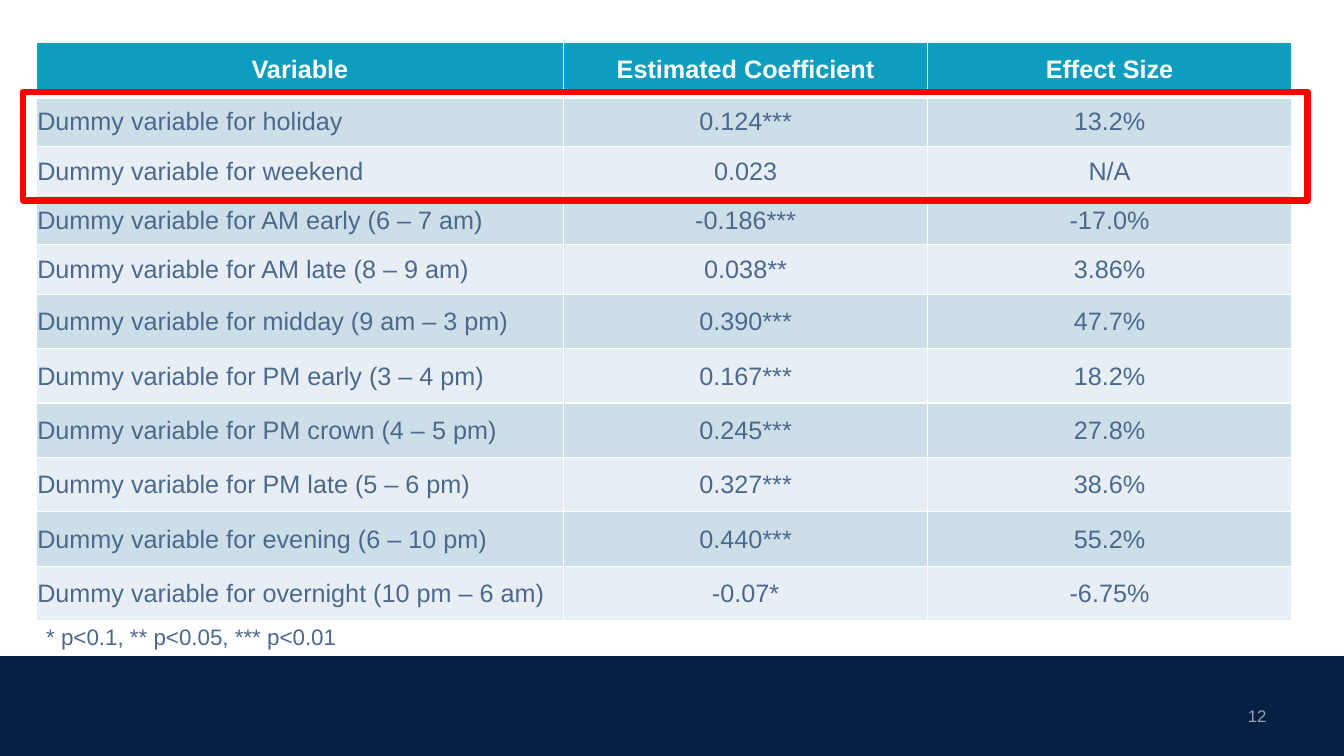
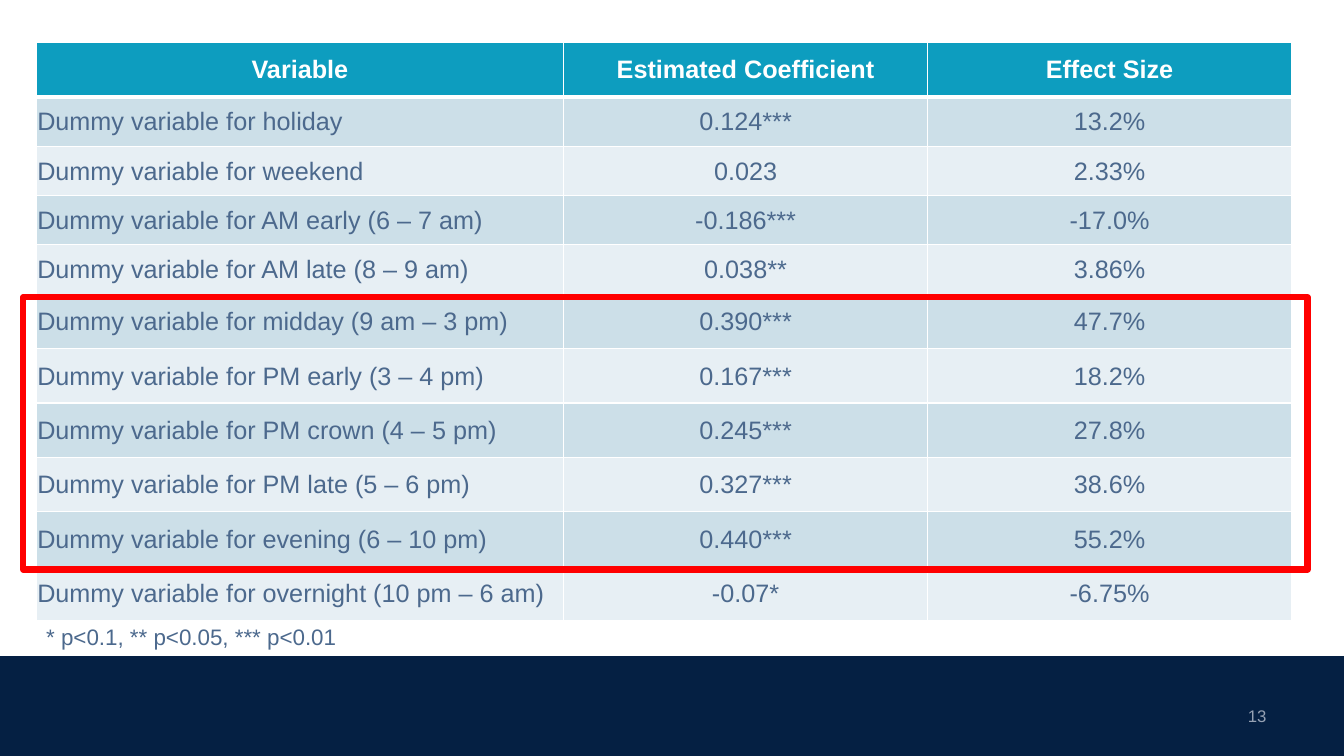
from dataclasses import dataclass

from pptx import Presentation
from pptx.dml.color import RGBColor
from pptx.enum.shapes import MSO_SHAPE
from pptx.enum.text import MSO_ANCHOR, PP_ALIGN
from pptx.oxml.ns import qn
from pptx.util import Inches, Pt
from lxml import etree

RECTANGLE = MSO_SHAPE.RECTANGLE
TOP, MIDDLE = MSO_ANCHOR.TOP, MSO_ANCHOR.MIDDLE
LEFT, CENTER, RIGHT = PP_ALIGN.LEFT, PP_ALIGN.CENTER, PP_ALIGN.RIGHT

SLIDE_WIDTH, SLIDE_HEIGHT = 13.33, 7.5
BAND_TOP = 6.51
TABLE_LEFT, TABLE_TOP = 0.36, 0.42
COLUMN_WIDTHS = [5.23, 3.61, 3.61]
ROW_HEIGHTS = [0.54] + [0.49] * 4 + [0.54] * 6
FRAME_LEFT, FRAME_WIDTH = 0.23, 12.74

HEADINGS = ("Variable", "Estimated Coefficient", "Effect Size")
ESTIMATES = [
    ("holiday", "0.124***", "13.2%"),
    ("weekend", "0.023", "2.33%"),
    ("AM early (6 – 7 am)", "-0.186***", "-17.0%"),
    ("AM late (8 – 9 am)", "0.038**", "3.86%"),
    ("midday (9 am – 3 pm)", "0.390***", "47.7%"),
    ("PM early (3 – 4 pm)", "0.167***", "18.2%"),
    ("PM crown (4 – 5 pm)", "0.245***", "27.8%"),
    ("PM late (5 – 6 pm)", "0.327***", "38.6%"),
    ("evening (6 – 10 pm)", "0.440***", "55.2%"),
    ("overnight (10 pm – 6 am)", "-0.07*", "-6.75%"),
]
SIGNIFICANCE = "* p<0.1, ** p<0.05, *** p<0.01"


@dataclass(frozen=True)
class Theme:
    font: str = "Arial"
    white: str = "FFFFFF"
    navy: str = "052043"
    teal: str = "0D9DBF"
    stripes: tuple = ("CCDFE8", "E7EFF4")
    body: str = "4C698D"
    muted: str = "96A1B3"
    highlight: str = "FF0000"
    table_size: int = 18
    note_size: int = 16
    number_size: int = 12
    grid_line: float = 1
    header_line: float = 3
    frame_line: float = 4.5


class Deck:
    def __init__(self, theme):
        self.theme = theme
        self.prs = Presentation()
        self.prs.slide_width = Inches(SLIDE_WIDTH)
        self.prs.slide_height = Inches(SLIDE_HEIGHT)
        self.slide = None

    def new_slide(self, number):
        """Start a slide with the shared band and slide number."""
        theme = self.theme
        self.slide = self.prs.slides.add_slide(self.prs.slide_layouts[6])
        band = self.rectangle(0, BAND_TOP, SLIDE_WIDTH, SLIDE_HEIGHT - BAND_TOP)
        band.fill.solid()
        band.fill.fore_color.rgb = RGBColor.from_string(theme.navy)
        band.line.fill.background()
        self.text(str(number), 11.65, 6.9, 1.01, 0.4, theme.number_size,
                  theme.muted, align=RIGHT, anchor=MIDDLE)

    def rectangle(self, left, top, width, height):
        shape = self.slide.shapes.add_shape(
            RECTANGLE, Inches(left), Inches(top), Inches(width), Inches(height))
        shape.shadow.inherit = False
        return shape

    def styled_run(self, paragraph, words, size, color, align, bold=False):
        paragraph.alignment = align
        run = paragraph.add_run()
        run.text = words
        run.font.name = self.theme.font
        run.font.size = Pt(size)
        run.font.bold = bold
        run.font.color.rgb = RGBColor.from_string(color)

    def text(self, words, left, top, width, height, size, color,
             align=LEFT, anchor=TOP, wrap=True):
        box = self.slide.shapes.add_textbox(
            Inches(left), Inches(top), Inches(width), Inches(height))
        frame = box.text_frame
        frame.word_wrap = wrap
        frame.vertical_anchor = anchor
        self.styled_run(frame.paragraphs[0], words, size, color, align)

    def borders(self, cell, top, bottom):
        grid = self.theme.grid_line
        properties = cell._tc.get_or_add_tcPr()
        for side, points in (("L", grid), ("R", grid), ("T", top), ("B", bottom)):
            edge = etree.SubElement(properties, qn(f"a:ln{side}"), w=str(Pt(points)))
            fill = etree.SubElement(edge, qn("a:solidFill"))
            etree.SubElement(fill, qn("a:srgbClr"), val=self.theme.white)

    def table(self, rows):
        theme = self.theme
        table = self.slide.shapes.add_table(
            len(rows), len(COLUMN_WIDTHS), Inches(TABLE_LEFT), Inches(TABLE_TOP),
            Inches(sum(COLUMN_WIDTHS)), Inches(sum(ROW_HEIGHTS))).table
        for column, width in zip(table.columns, COLUMN_WIDTHS):
            column.width = Inches(width)
        for r, (values, height) in enumerate(zip(rows, ROW_HEIGHTS)):
            table.rows[r].height = Inches(height)
            header = r == 0
            background = theme.teal if header else theme.stripes[(r - 1) % 2]
            for c, value in enumerate(values):
                cell = table.cell(r, c)
                cell.vertical_anchor = MIDDLE
                if not header:
                    cell.margin_left = cell.margin_right = cell.margin_top = Inches(0.01)
                    cell.margin_bottom = 0
                self.borders(cell,
                             top=theme.header_line if r == 1 else theme.grid_line,
                             bottom=theme.header_line if header else theme.grid_line)
                cell.fill.solid()
                cell.fill.fore_color.rgb = RGBColor.from_string(background)
                self.styled_run(cell.text_frame.paragraphs[0], value, theme.table_size,
                                theme.white if header else theme.body,
                                CENTER if header or c else LEFT, bold=header)

    def highlight(self, top, height):
        """Outline a group of table rows."""
        frame = self.rectangle(FRAME_LEFT, top, FRAME_WIDTH, height)
        frame.fill.background()
        frame.line.color.rgb = RGBColor.from_string(self.theme.highlight)
        frame.line.width = Pt(self.theme.frame_line)
        etree.SubElement(frame.line._get_or_add_ln(), qn("a:round"))


def main():
    theme = Theme()
    deck = Deck(theme)

    # Slide number, weekend effect size, top and height of the highlight
    for number, weekend_effect, top, height in (
            (12, "N/A", 0.91, 1.08),
            (13, "2.33%", 2.95, 2.7)):
        deck.new_slide(number)
        rows = [HEADINGS]
        for period, coefficient, effect in ESTIMATES:
            if period == "weekend":
                effect = weekend_effect
            rows.append((f"Dummy variable for {period}", coefficient, effect))
        deck.table(rows)
        deck.highlight(top, height)
        deck.text(SIGNIFICANCE, TABLE_LEFT, 6.13, 3.12, 0.64, theme.note_size,
                  theme.body, wrap=False)

    deck.prs.save("out.pptx")


if __name__ == "__main__":
    main()
